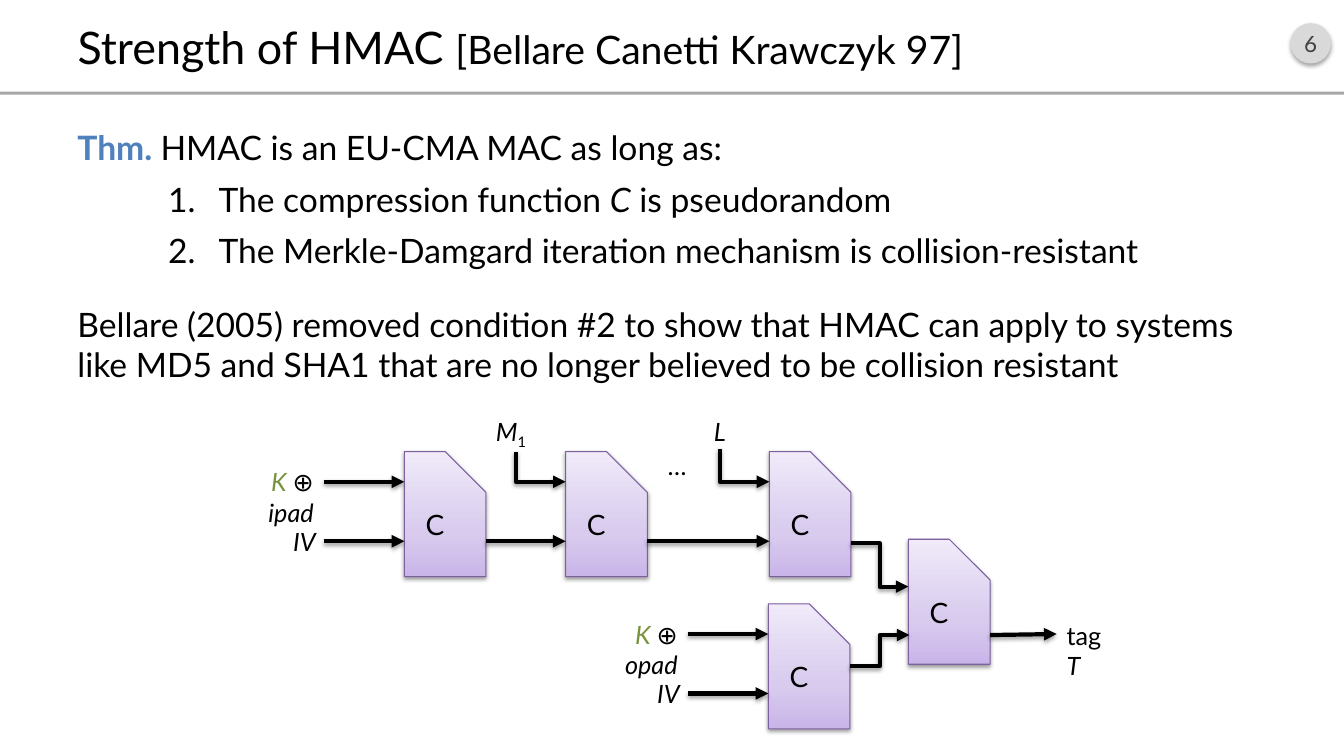
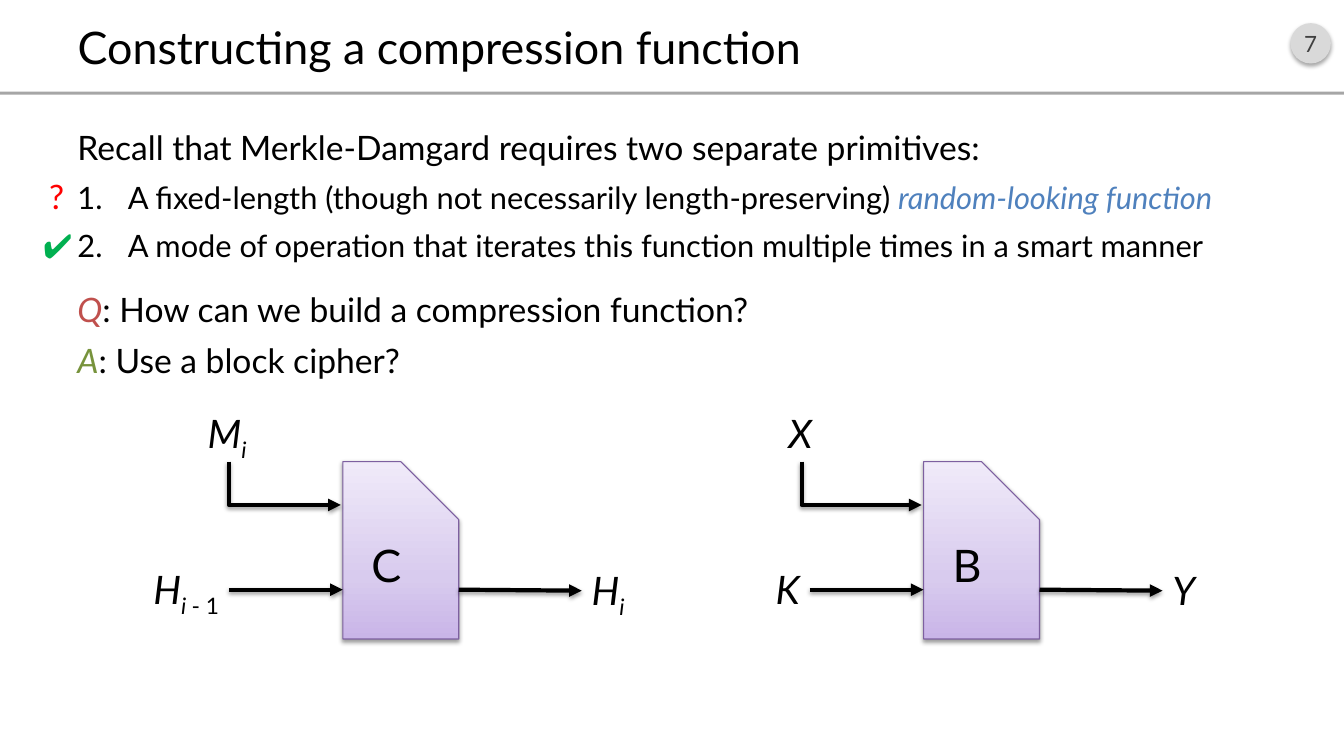
"""Build two slides on HMAC strength and compression functions."""
from copy import deepcopy
from dataclasses import dataclass
from typing import Optional

from lxml import etree
from pptx import Presentation
from pptx.dml.color import RGBColor
from pptx.enum.shapes import MSO_CONNECTOR, MSO_SHAPE
from pptx.enum.text import MSO_ANCHOR, MSO_AUTO_SIZE, PP_ALIGN
from pptx.oxml.ns import qn
from pptx.util import Inches, Pt

STRAIGHT, ELBOW = MSO_CONNECTOR.STRAIGHT, MSO_CONNECTOR.ELBOW
SNIPPED, OVAL, RECTANGLE = MSO_SHAPE.SNIP_1_RECTANGLE, MSO_SHAPE.OVAL, MSO_SHAPE.RECTANGLE
LEFT, CENTER, RIGHT = PP_ALIGN.LEFT, PP_ALIGN.CENTER, PP_ALIGN.RIGHT
MIDDLE = MSO_ANCHOR.MIDDLE
NO_AUTOFIT = MSO_AUTO_SIZE.NONE
TITLE_ONLY = 5

FONT = "Lato"
BLACK, BLUE, RED, GREEN = "000000", "4F81BD", "C0504D", "77933C"
BAR_GRAY, BADGE_GRAY, BADGE_TEXT = "A6A6A6", "D9D9D9", "404040"
CHECK_GREEN, QUESTION_RED = "00B050", "FF0000"
BLOCK_LINE = "7D60A0"
BLOCK_STOPS = ((0, "C9B5E8"), (0.35, "D8CBEE"), (1, "F0EAF9"))

SMALL_WIDTH, SMALL_HEIGHT = 0.81, 1.24
LARGE_WIDTH, LARGE_HEIGHT = 1.15, 1.76
UPPER_PORT, LOWER_PORT = 0.3, 0.89


@dataclass(frozen=True)
class Run:
    """A piece of text; unset values come from its paragraph."""
    text: str
    color: Optional[str] = None
    italic: bool = False
    bold: bool = False
    subscript: bool = False
    size: Optional[float] = None


@dataclass(frozen=True)
class Line:
    """A paragraph of body text."""
    runs: tuple[Run, ...]
    size: float = 24
    before: float = 8
    number_indent: Optional[float] = None


@dataclass(frozen=True)
class Label:
    """A short text placed on a slide."""
    left: float
    top: float
    width: float
    runs: tuple[Run, ...]
    size: float = 18
    alignment: PP_ALIGN = LEFT
    color: str = BLACK


@dataclass(frozen=True)
class Arrow:
    """An arrow between two points; a corner arrow goes down, then right."""
    begin: tuple[float, float]
    end: tuple[float, float]
    kind: str = "straight"


@dataclass(frozen=True)
class Cipher:
    """A large block with two inputs and one output."""
    left: float
    letter: str
    message: tuple[Run, ...]
    key: tuple[Run, ...]
    output: tuple[Run, ...]
    bend: float


def rgb(color: str) -> RGBColor:
    """Turn a hex string into a colour."""
    return RGBColor.from_string(color)


def italic(text: str, subscript: str = "") -> tuple[Run, ...]:
    """Give an italic symbol with an optional italic index."""
    symbol = Run(text, italic=True)
    return (symbol, Run(subscript, italic=True, subscript=True)) if subscript else (symbol,)


def write(paragraph, runs: tuple[Run, ...], size: float, color: str = BLACK, alignment=LEFT) -> None:
    """Fill a paragraph with formatted runs."""
    paragraph.alignment = alignment
    font = paragraph.font
    font.name, font.size = FONT, Pt(size)
    font.color.rgb = rgb(color)
    for part in runs:
        run = paragraph.add_run()
        run.text = part.text
        if part.italic:
            run.font.italic = True
        if part.bold:
            run.font.bold = True
        if part.size:
            run.font.size = Pt(part.size)
        if part.color:
            run.font.color.rgb = rgb(part.color)
        if part.subscript:
            run.font._element.set("baseline", "-25000")


def add_shadow(shape, opacity: int = 38, distance: float = 1.6) -> None:
    """Give a shape or connector a soft shadow below it."""
    properties = shape.element.spPr
    effects = properties.find(qn("a:effectLst"))
    if effects is None:
        effects = etree.SubElement(properties, qn("a:effectLst"))
    shadow = etree.SubElement(effects, qn("a:outerShdw"), blurRad=str(Pt(3.1)),
                              dist=str(Pt(distance)), dir="5400000", rotWithShape="0")
    color = etree.SubElement(shadow, qn("a:srgbClr"), val=BLACK)
    etree.SubElement(color, qn("a:alpha"), val=str(opacity * 1000))


def add_plain_shape(slide, kind, left: float, top: float, width: float, height: float, color: str):
    """Add a shape with a solid fill, no line and no shadow."""
    shape = slide.shapes.add_shape(kind, Inches(left), Inches(top), Inches(width), Inches(height))
    shape.shadow.inherit = False
    shape.fill.solid()
    shape.fill.fore_color.rgb = rgb(color)
    shape.line.fill.background()
    return shape


def add_base_slide(presentation, title: tuple[Run, ...], number: int):
    """Add a slide with its title, rule and number badge."""
    slide = presentation.slides.add_slide(presentation.slide_layouts[TITLE_ONLY])
    add_plain_shape(slide, RECTANGLE, 0, 0.91, 13.33, 0.03, BAR_GRAY)
    badge = add_plain_shape(slide, OVAL, 12.8, 0.23, 0.4, 0.4, BADGE_GRAY)
    add_shadow(badge, 35, 1.8)
    frame = badge.text_frame
    frame.margin_left = frame.margin_right = 0
    frame.vertical_anchor = MIDDLE
    write(frame.paragraphs[0], (Run(str(number)),), 16, BADGE_TEXT, CENTER)
    heading = slide.shapes.title
    heading.left, heading.top = Inches(0.67), Inches(0.16)
    heading.width, heading.height = Inches(12), Inches(0.6)
    heading.text_frame.auto_size = NO_AUTOFIT
    heading.text_frame.vertical_anchor = MIDDLE
    write(heading.text_frame.paragraphs[0], title, 32)
    return slide


def add_text_frame(slide, left: float, top: float, width: float, height: float):
    """Add a wrapping text box and return its frame."""
    box = slide.shapes.add_textbox(Inches(left), Inches(top), Inches(width), Inches(height))
    box.text_frame.word_wrap = True
    return box.text_frame


def add_body(slide, lines: tuple[Line, ...]) -> None:
    """Add the main text, numbering the indented lines."""
    frame = add_text_frame(slide, 0.67, 1.21, 12, 5.75)
    for index, line in enumerate(lines):
        paragraph = frame.add_paragraph() if index else frame.paragraphs[0]
        paragraph.space_before = Pt(line.before)
        if line.number_indent is not None:
            properties = paragraph._p.get_or_add_pPr()
            properties.set("marL", str(Inches(line.number_indent)))
            properties.set("indent", str(Inches(-0.5)))
            etree.SubElement(properties, qn("a:buFont"), typeface="+mj-lt")
            etree.SubElement(properties, qn("a:buAutoNum"), type="arabicPeriod")
        write(paragraph, line.runs, line.size)


def add_label(slide, label: Label) -> None:
    """Add a short text."""
    frame = add_text_frame(slide, label.left, label.top, label.width, label.size / 50)
    write(frame.paragraphs[0], label.runs, label.size, label.color, label.alignment)


def add_block(slide, left: float, top: float, width: float, height: float, letter: str, size: float) -> None:
    """Add a function block with a cut corner and a gradient."""
    block = slide.shapes.add_shape(SNIPPED, Inches(left), Inches(top), Inches(width), Inches(height))
    block.adjustments[0] = 0.5
    block.fill.gradient()
    stop_list = block.element.spPr.find(".//" + qn("a:gsLst"))
    stop_list.append(deepcopy(stop_list[0]))
    for stop, (position, color) in zip(block.fill.gradient_stops, BLOCK_STOPS):
        stop.position = position
        stop.color.rgb = rgb(color)
    block.fill.gradient_angle = 90
    block.line.color.rgb = rgb(BLOCK_LINE)
    block.line.width = Pt(0.75)
    block.shadow.inherit = False
    add_shadow(block)
    block.text_frame.vertical_anchor = MIDDLE
    write(block.text_frame.paragraphs[0], (Run(letter),), size, alignment=CENTER)


def add_arrow(slide, arrow: Arrow) -> None:
    """Add a straight, stepped or corner arrow."""
    (x1, y1), (x2, y2) = arrow.begin, arrow.end
    kind = STRAIGHT if arrow.kind == "straight" else ELBOW
    connector = slide.shapes.add_connector(kind, Inches(x1), Inches(y1), Inches(x2), Inches(y2))
    if arrow.kind == "corner":
        across, down = x2 - x1, y2 - y1
        connector.left = Inches((x1 + x2 - down) / 2)
        connector.top = Inches((y1 + y2 - across) / 2)
        connector.width, connector.height = Inches(down), Inches(across)
        properties = connector.element.spPr
        properties.find(qn("a:prstGeom")).set("prst", "bentConnector2")
        frame = properties.find(qn("a:xfrm"))
        frame.set("rot", "16200000")
        frame.set("flipH", "1")
    connector.line.color.rgb = rgb(BLACK)
    connector.line.width = Pt(3)
    etree.SubElement(connector.line._get_or_add_ln(), qn("a:tailEnd"), type="triangle")
    add_shadow(connector)


def add_keyed_input(slide, left: float, top: float, pad: str, width: float) -> None:
    """Add the padded key and IV inputs of a block."""
    key = (Run("K ", GREEN, italic=True), Run("⊕ "), Run(pad, italic=True))
    add_label(slide, Label(left - 0.8 - width, top + 0.1, width, key, alignment=RIGHT))
    add_label(slide, Label(left - 1.2, top + 0.69, 0.43, italic("IV")))
    for port in (UPPER_PORT, LOWER_PORT):
        add_arrow(slide, Arrow((left - 0.8, top + port), (left, top + port)))


def add_cipher(slide, cipher: Cipher) -> None:
    """Add a large block with its labelled arrows."""
    left, right = cipher.left, cipher.left + LARGE_WIDTH
    add_block(slide, left, 4.58, LARGE_WIDTH, LARGE_HEIGHT, cipher.letter, 32)
    add_arrow(slide, Arrow((left - 1.13, 5.85), (left, 5.85)))
    add_arrow(slide, Arrow((left - cipher.bend, 4.58), (left - 0.02, 5.01), "corner"))
    add_arrow(slide, Arrow((right, 5.85), (right + 1.22, 5.86)))
    add_label(slide, Label(left - 2.05, 5.56, 0.92, cipher.key, 28, RIGHT))
    add_label(slide, Label(left - 1.44, 4.01, 0.62, cipher.message, 28))
    add_label(slide, Label(right + 1.22, 5.57, 0.55, cipher.output, 28))


def build_strength_slide(presentation) -> None:
    """Build the slide on the strength of HMAC."""
    title = (Run("Strength of HMAC "), Run("[Bellare Canetti Krawczyk 97]", size=28))
    slide = add_base_slide(presentation, title, 6)
    add_body(slide, (
        Line((Run("Thm. ", BLUE, bold=True), Run("HMAC is an EU-CMA MAC as long as:"))),
        Line((Run("The compression function "), Run("C", italic=True), Run(" is pseudorandom")),
             number_indent=1.4),
        Line((Run("The Merkle-Damgard iteration mechanism is collision-resistant"),), number_indent=1.4),
        Line((Run("Bellare (2005) removed condition #2 to show that HMAC can apply to systems like "
                  "MD5 and SHA1 that are no longer believed to be collision resistant"),), before=24),
    ))
    for left, top in ((4.01, 4.48), (5.61, 4.48), (7.63, 4.48), (9.01, 5.35), (7.62, 5.99)):
        add_block(slide, left, top, SMALL_WIDTH, SMALL_HEIGHT, "C", 20)
    add_keyed_input(slide, 4.01, 4.48, "ipad", 1.08)
    add_keyed_input(slide, 7.62, 5.99, "opad", 1.14)
    for arrow in (
        Arrow((4.82, 5.37), (5.61, 5.37)),
        Arrow((6.42, 5.37), (7.63, 5.37)),
        Arrow((9.82, 6.3), (10.48, 6.29)),
        Arrow((5.12, 4.48), (5.61, 4.78), "corner"),
        Arrow((7.14, 4.45), (7.63, 4.78), "corner"),
        Arrow((8.44, 5.39), (9.01, 5.82), "step"),
        Arrow((8.43, 6.61), (9.02, 6.3), "step"),
    ):
        add_arrow(slide, arrow)
    for label in (
        Label(4.82, 4.08, 0.55, (Run("M", italic=True), Run("1", subscript=True))),
        Label(6.89, 4.08, 0.5, italic("L"), alignment=CENTER),
        Label(6.53, 4.42, 0.5, italic("…")),
        Label(10.48, 6.1, 0.72, (Run("tag "), Run("T", italic=True))),
    ):
        add_label(slide, label)


def build_compression_slide(presentation) -> None:
    """Build the slide on constructing a compression function."""
    slide = add_base_slide(presentation, (Run("Constructing a compression function"),), 7)
    add_body(slide, (
        Line((Run("Recall that Merkle-Damgard requires two separate primitives:"),)),
        Line((Run("A fixed-length (though not necessarily length-preserving) "),
              Run("random-looking function", BLUE, italic=True)), 22, number_indent=0.5),
        Line((Run("A mode of operation that iterates this function multiple times in a smart manner"),),
             22, number_indent=0.5),
        Line((Run("Q", RED, italic=True), Run(": How can we build a compression function?")), before=18),
        Line((Run("A", GREEN, italic=True), Run(": Use a block cipher?"))),
    ))
    previous = italic("H", "i ") + (Run("- 1", subscript=True),)
    add_cipher(slide, Cipher(3.4, "C", italic("M", "i"), previous, italic("H", "i"), 1.13))
    add_cipher(slide, Cipher(9.16, "B", italic("X"), italic("K"), italic("Y"), 1.21))
    add_label(slide, Label(0.33, 2.18, 0.47, (Run("✔"),), 24, color=CHECK_GREEN))
    add_label(slide, Label(0.39, 1.7, 0.36, (Run("?"),), 24, color=QUESTION_RED))


def main() -> None:
    """Build and save the presentation."""
    presentation = Presentation()
    presentation.slide_width, presentation.slide_height = Inches(13.33), Inches(7.5)
    build_strength_slide(presentation)
    build_compression_slide(presentation)
    presentation.save("out.pptx")


if __name__ == "__main__":
    main()
